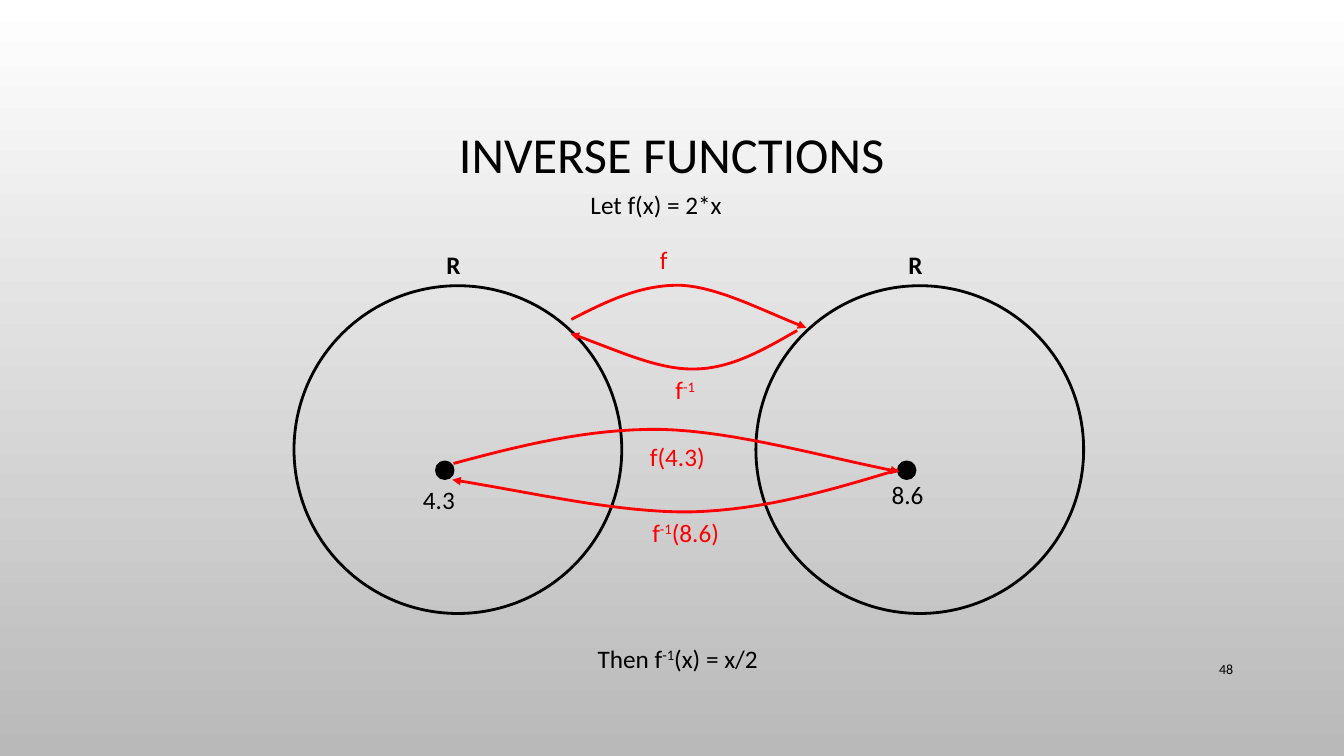
import pptx
import pptx.dml.color
import pptx.enum.shapes
import pptx.enum.text
import pptx.util
from lxml import etree
from pptx.util import Cm

FONT = "Calibri"
BLACK, RED = "000000", "FF0000"
SET_SPACING = 11.64  # from the domain to the codomain, in cm
STEPS = 16  # line pieces per Bézier segment
ALIGN = pptx.enum.text.PP_ALIGN
ANCHOR = pptx.enum.text.MSO_ANCHOR

# Each arrow: a start point, then two cubic Bézier segments, in cm
ARROWS = [
    # f
    [(14.4, 8.05), (15.29, 7.59), (16.18, 7.16), (17.17, 7.19),
     (18.14, 7.24), (19.3, 7.87), (20.32, 8.26)],
    # f(4.3)
    [(11.43, 11.68), (13.11, 11.23), (14.81, 10.8), (16.66, 10.82),
     (18.54, 10.87), (20.73, 11.51), (22.66, 11.89)],
    # inverse of f
    [(20.09, 8.33), (19.25, 8.81), (18.42, 9.3), (17.48, 9.3),
     (16.51, 9.32), (15.37, 8.74), (14.38, 8.41)],
    # inverse of f at 8.6
    [(22.63, 11.84), (20.96, 12.34), (19.3, 12.85), (17.42, 12.9),
     (15.57, 12.93), (13.36, 12.4), (11.4, 12.09)],
]

# Left, top, width in cm, colour, runs ("-1" is raised)
LABELS = [
    (16.36, 6.02, 0.74, RED, ["f"]),
    (10.36, 12.07, 1.4, BLACK, ["4.3"]),
    (22.17, 11.96, 1.4, BLACK, ["8.6"]),
    (14.48, 4.65, 4.11, BLACK, ["Let f(x) = 2*x"]),
    (16.71, 9.32, 1.12, RED, ["f", "-1"]),
    (16.08, 11, 1.98, RED, ["f(4.3)"]),
    (16.1, 12.9, 2.36, RED, ["f", "-1", "(8.6)"]),
    (14.58, 16.08, 5, BLACK, ["Then f", "-1", "(x) = x/2"]),
]


def colour(value):
    return pptx.dml.color.RGBColor.from_string(value)


def add_run(paragraph, text, size, text_colour, bold=False):
    run = paragraph.add_run()
    run.text = text
    run.font.name = FONT
    run.font.size = pptx.util.Pt(size)
    run.font.bold = bold
    run.font.color.rgb = colour(text_colour)
    if text == "-1":
        run._r.get_or_add_rPr().set("baseline", "30000")


def add_label(slide, left, top, width, text_colour, runs, size=18,
              bold=False, align=ALIGN.CENTER, anchor=ANCHOR.TOP, wrap=False):
    box = slide.shapes.add_textbox(Cm(left), Cm(top), Cm(width), Cm(1.02))
    frame = box.text_frame
    frame.word_wrap = wrap
    frame.vertical_anchor = anchor
    paragraph = frame.paragraphs[0]
    paragraph.alignment = align
    for text in runs:
        add_run(paragraph, text, size, text_colour, bold)


def style_outline(shape, line_colour):
    shape.shadow.inherit = False
    shape.line.color.rgb = colour(line_colour)
    shape.line.width = pptx.util.Pt(2)


def add_circle(slide, left, top, diameter, filled=False):
    circle = slide.shapes.add_shape(
        pptx.enum.shapes.MSO_SHAPE.OVAL,
        Cm(left), Cm(top), Cm(diameter), Cm(diameter))
    style_outline(circle, BLACK)
    if filled:
        circle.fill.solid()
        circle.fill.fore_color.rgb = colour(BLACK)
    else:
        circle.fill.background()


def bezier_point(points, t):
    weights = [(1 - t) ** 3, 3 * t * (1 - t) ** 2, 3 * t ** 2 * (1 - t), t ** 3]
    return tuple(Cm(sum(weight * point[axis]
                        for weight, point in zip(weights, points)))
                 for axis in (0, 1))


def add_curved_arrow(slide, points):
    vertices = [bezier_point(points[first:first + 4], step / STEPS)
                for first in (0, 3) for step in range(1, STEPS + 1)]
    start_x, start_y = points[0]
    builder = slide.shapes.build_freeform(Cm(start_x), Cm(start_y))
    builder.add_line_segments(vertices, close=False)
    arrow = builder.convert_to_shape()
    arrow.fill.background()
    style_outline(arrow, RED)
    line = arrow.line._get_or_add_ln()
    etree.SubElement(line, pptx.oxml.ns.qn("a:tailEnd"), type="triangle")


def set_background(slide):
    fill = slide.background.fill
    fill.gradient()
    fill.gradient_angle = 270
    for stop, value in zip(fill.gradient_stops, ("FFFFFF", "B9B9B9")):
        stop.color.rgb = colour(value)


def set_title(slide, text):
    title = slide.shapes.title
    title.left, title.top = Cm(2.54), Cm(1.73)
    title.width, title.height = Cm(28.78), Cm(4.45)
    title.text_frame.vertical_anchor = ANCHOR.MIDDLE
    paragraph = title.text_frame.paragraphs[0]
    paragraph.alignment = ALIGN.CENTER
    paragraph.line_spacing = 0.9
    add_run(paragraph, text, 36, BLACK)


def main():
    presentation = pptx.Presentation()
    presentation.slide_width, presentation.slide_height = Cm(33.87), Cm(19.05)
    slide = presentation.slides.add_slide(presentation.slide_layouts[5])
    set_background(slide)
    set_title(slide, "INVERSE FUNCTIONS")

    # The two sets, each with its name and one element
    for offset in (0, SET_SPACING):
        add_circle(slide, 7.41 + offset, 7.2, 8.26)
        add_label(slide, 11 + offset, 6.15, 0.97, BLACK, ["R"],
                  bold=True, align=ALIGN.LEFT, wrap=True)
        add_circle(slide, 11 + offset, 11.64, 0.42, filled=True)

    # Mappings and their labels
    for points in ARROWS:
        add_curved_arrow(slide, points)
    for label in LABELS:
        add_label(slide, *label)

    # Slide number
    add_label(slide, 29.21, 16.34, 2.12, BLACK, ["48"], size=10,
              align=ALIGN.RIGHT, anchor=ANCHOR.MIDDLE, wrap=True)
    presentation.save("out.pptx")


if __name__ == "__main__":
    main()
